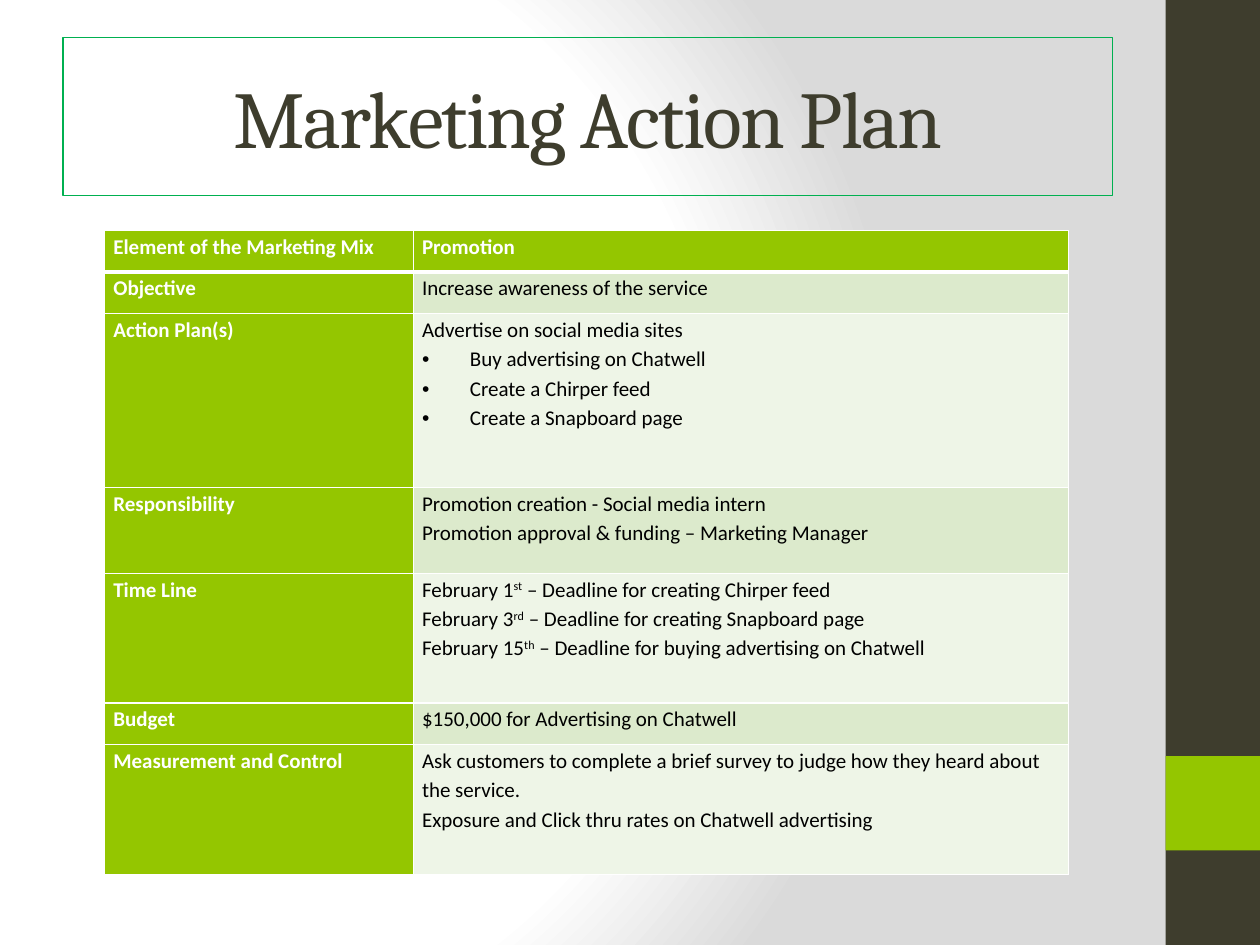
from dataclasses import dataclass

from lxml.etree import SubElement
from pptx import Presentation
from pptx.dml.color import RGBColor
from pptx.enum.shapes import MSO_SHAPE
from pptx.enum.text import MSO_ANCHOR, MSO_AUTO_SIZE, PP_ALIGN
from pptx.oxml import parse_xml
from pptx.oxml.ns import nsdecls, qn
from pptx.util import Inches, Pt

COLORS = {
    "dark": "3E3D2D",
    "green": "94C600",
    "outline": "00B050",
    "band": "DCEACC",
    "light_band": "EEF5E7",
    "white": "FFFFFF",
    "gray": "DADADA",
    "black": "000000",
}
SUPERSCRIPT_MARK = "^"
BULLET = "•"


@dataclass
class Panel:
    top: float
    height: float
    color: str


@dataclass
class PlanRow:
    heading: str
    lines: list[str]
    height: float = 0.33


PANELS = [Panel(0, 7.5, "dark"), Panel(6, 0.75, "green")]
COLUMN_WIDTHS = [2.45, 5.2]
ROWS = [
    PlanRow("Element of the Marketing Mix", ["Promotion"]),
    PlanRow("Objective", ["Increase awareness of the service"]),
    PlanRow("Action Plan(s)", [
        "Advertise on social media sites",
        BULLET + "Buy advertising on Chatwell",
        BULLET + "Create a Chirper feed",
        BULLET + "Create a Snapboard page",
    ], 1.38),
    PlanRow("Responsibility", [
        "Promotion creation - Social media intern",
        "Promotion approval & funding – Marketing Manager",
    ], 0.68),
    PlanRow("Time Line", [
        "February 1^st^ – Deadline for creating Chirper feed",
        "February 3^rd^ – Deadline for creating Snapboard page",
        "February 15^th^ – Deadline for buying advertising on Chatwell",
    ], 1.03),
    PlanRow("Budget", ["$150,000 for Advertising on Chatwell"]),
    PlanRow("Measurement and Control", [
        "Ask customers to complete a brief survey to judge how they heard about the service.",
        "Exposure and Click thru rates on Chatwell advertising",
    ], 1.03),
]


def rgb(name: str) -> RGBColor:
    return RGBColor.from_string(COLORS[name])


def set_all(target, values: dict) -> None:
    for name, value in values.items():
        setattr(target, name, value)


def set_background(slide) -> None:
    """Fill the background with a circular gradient from white to gray."""
    slide.background.fill.gradient()
    gradient = slide.element.xpath(".//p:bgPr/a:gradFill")[0]
    stops = "".join(
        f'<a:gs pos="{position * 1000}"><a:srgbClr val="{COLORS[color]}"/></a:gs>'
        for position, color in [(0, "white"), (75, "white"), (100, "gray")]
    )
    gradient.getparent().replace(gradient, parse_xml(
        f'<a:gradFill {nsdecls("a")} rotWithShape="1"><a:gsLst>{stops}</a:gsLst>'
        '<a:path path="circle"><a:fillToRect l="20000" t="50000" r="100000" b="50000"/>'
        "</a:path></a:gradFill>"
    ))


def add_panel(slide, panel: Panel) -> None:
    shape = slide.shapes.add_shape(
        MSO_SHAPE.RECTANGLE, Inches(9.25), Inches(panel.top), Inches(0.75), Inches(panel.height)
    )
    shape.shadow.inherit = False
    shape.fill.solid()
    shape.fill.fore_color.rgb = rgb(panel.color)
    shape.line.fill.background()


def fill_title(title) -> None:
    set_all(title, {"left": Inches(0.5), "top": Inches(0.3),
                    "width": Inches(8.33), "height": Inches(1.25)})
    title.line.color.rgb = rgb("outline")
    title.line.width = Pt(0.75)
    set_all(title.text_frame, {"vertical_anchor": MSO_ANCHOR.MIDDLE,
                               "auto_size": MSO_AUTO_SIZE.NONE, "word_wrap": True})
    paragraph = title.text_frame.paragraphs[0]
    paragraph.alignment = PP_ALIGN.CENTER
    run = paragraph.add_run()
    run.text = "Marketing Action Plan"
    set_all(run.font, {"size": Pt(46), "name": "Cambria"})
    run.font.color.rgb = rgb("dark")
    run._r.get_or_add_rPr().set("spc", "-100")


def set_borders(cell, bottom_width: float) -> None:
    properties = cell._tc.get_or_add_tcPr()
    widths = {"lnL": 1, "lnR": 1, "lnT": 1, "lnB": bottom_width}
    for index, (side, width) in enumerate(widths.items()):
        properties.insert(index, parse_xml(
            f'<a:{side} {nsdecls("a")} w="{Pt(width)}"><a:solidFill>'
            f'<a:srgbClr val="{COLORS["white"]}"/></a:solidFill></a:{side}>'
        ))


def write_line(paragraph, line: str, color: str, bold: bool) -> None:
    """Write one paragraph; marked parts are raised and a leading bullet becomes a list item."""
    paragraph.line_spacing = 1.15
    if line.startswith(BULLET):
        properties = paragraph._p.get_or_add_pPr()
        properties.set("marL", str(Inches(0.38)))
        properties.set("indent", str(-Inches(0.38)))
        SubElement(properties, qn("a:buFont")).set("typeface", "Arial")
        SubElement(properties, qn("a:buChar")).set("char", BULLET)
    for index, part in enumerate(line.removeprefix(BULLET).split(SUPERSCRIPT_MARK)):
        run = paragraph.add_run()
        run.text = part
        set_all(run.font, {"size": Pt(12), "name": "Calibri", "bold": bold})
        run.font.color.rgb = rgb(color)
        if index % 2:
            run._r.get_or_add_rPr().set("baseline", "30000")


def fill_cell(cell, lines: list[str], fill: str, is_heading: bool, bottom_width: float) -> None:
    set_all(cell, {"margin_left": Inches(0.07), "margin_right": Inches(0.07),
                   "margin_top": 0, "margin_bottom": 0, "vertical_anchor": MSO_ANCHOR.TOP})
    cell.fill.solid()
    cell.fill.fore_color.rgb = rgb(fill)
    set_borders(cell, bottom_width)
    for index, line in enumerate(lines):
        paragraph = cell.text_frame.add_paragraph() if index else cell.text_frame.paragraphs[0]
        write_line(paragraph, line, "white" if is_heading else "black", is_heading)


def add_plan_table(slide, rows: list[PlanRow]) -> None:
    table = slide.shapes.add_table(
        len(rows), len(COLUMN_WIDTHS), Inches(0.83), Inches(1.83),
        Inches(sum(COLUMN_WIDTHS)), Inches(sum(row.height for row in rows)),
    ).table
    for column, width in zip(table.columns, COLUMN_WIDTHS):
        column.width = Inches(width)
    for row_index, row in enumerate(rows):
        table.rows[row_index].height = Inches(row.height)
        is_header = row_index == 0
        band = "band" if row_index % 2 else "light_band"
        for column_index, lines in enumerate([[row.heading], row.lines]):
            is_heading = is_header or column_index == 0
            fill_cell(table.cell(row_index, column_index), lines,
                      "green" if is_heading else band, is_heading, 3 if is_header else 1)


def main() -> None:
    presentation = Presentation()
    set_all(presentation, {"slide_width": Inches(10), "slide_height": Inches(7.5)})
    slide = presentation.slides.add_slide(presentation.slide_layouts[5])
    set_background(slide)
    for panel in PANELS:
        add_panel(slide, panel)
    fill_title(slide.shapes.title)
    add_plan_table(slide, ROWS)
    presentation.save("out.pptx")


if __name__ == "__main__":
    main()
